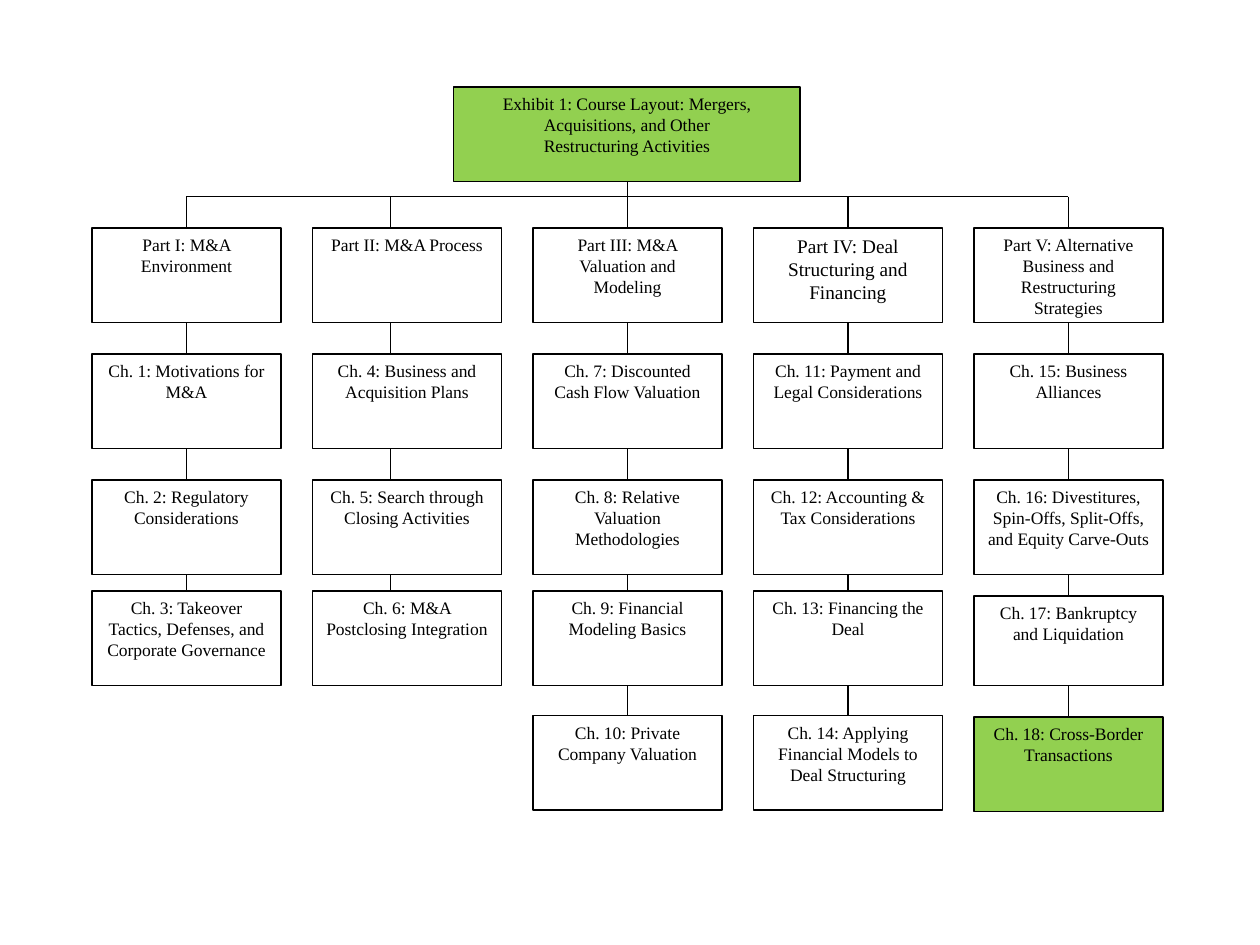
"""Build the course layout chart: five parts, each a chain of chapters."""
from dataclasses import dataclass
from itertools import pairwise

import pptx
import pptx.dml.color
import pptx.enum.shapes
import pptx.enum.text
import pptx.oxml
import pptx.util
from pptx.util import Inches

COLORS = {"ink": "000000", "plain": "FFFFFF", "highlight": "92D050"}
FONT = "Times New Roman"
BOX_WIDTH, BOX_HEIGHT = 1.5, 0.75
FIRST_LEFT, COLUMN_PITCH = 0.73, 1.75
LEVEL_TOPS = (1.81, 2.81, 3.81, 4.69, 5.68)
BUS_Y = 1.56
ROOT_LEFT, ROOT_TOP, ROOT_WIDTH = 3.6, 0.69, 2.75


@dataclass
class Topic:
    label: str
    size: int = 10
    fill: str = "plain"
    drop: float = 0
    height: float = BOX_HEIGHT


@dataclass
class Part:
    topics: list[Topic]
    stem_shift: float = 0


PARTS = [
    Part([
        Topic("Part I: M&A Environment"),
        Topic("Ch. 1: Motivations for M&A"),
        Topic("Ch. 2: Regulatory Considerations"),
        Topic("Ch. 3: Takeover Tactics, Defenses, and Corporate Governance"),
    ]),
    Part([
        Topic("Part II: M&A Process"),
        Topic("Ch. 4: Business and Acquisition Plans"),
        Topic("Ch. 5: Search through Closing Activities"),
        Topic("Ch. 6: M&A Postclosing Integration"),
    ], stem_shift=-0.13),
    Part([
        Topic("Part III: M&A Valuation and Modeling"),
        Topic("Ch. 7: Discounted Cash Flow Valuation"),
        Topic("Ch. 8: Relative Valuation Methodologies"),
        Topic("Ch. 9: Financial Modeling Basics"),
        Topic("Ch. 10: Private Company Valuation"),
    ]),
    Part([
        Topic("Part IV: Deal Structuring and Financing", size=11),
        Topic("Ch. 11: Payment and Legal Considerations"),
        Topic("Ch. 12: Accounting & Tax Considerations"),
        Topic("Ch. 13: Financing the Deal"),
        Topic("Ch. 14: Applying Financial Models to Deal Structuring"),
    ]),
    Part([
        Topic("Part V: Alternative Business and Restructuring Strategies"),
        Topic("Ch. 15: Business Alliances"),
        Topic("Ch. 16: Divestitures, Spin-Offs, Split-Offs, and Equity Carve-Outs"),
        Topic("Ch. 17: Bankruptcy and Liquidation", drop=0.04, height=0.71),
        Topic("Ch. 18: Cross-Border Transactions", fill="highlight", drop=0.01),
    ]),
]


def rgb(name: str) -> pptx.dml.color.RGBColor:
    """Look up a palette colour."""
    return pptx.dml.color.RGBColor.from_string(COLORS[name])


def format_box(box, text: str, size: int, fill: str) -> None:
    """Fill, outline and label a chart box."""
    box.fill.solid()
    box.fill.fore_color.rgb = rgb(fill)
    box.line.color.rgb = rgb("ink")
    box.line.width = pptx.util.Pt(0.75)
    frame = box.text_frame
    frame.text = text
    frame.word_wrap = True
    frame.auto_size = pptx.enum.text.MSO_AUTO_SIZE.NONE
    frame.vertical_anchor = pptx.enum.text.MSO_ANCHOR.TOP
    frame.margin_left = frame.margin_right = Inches(0.1)
    frame.margin_top = frame.margin_bottom = Inches(0.05)
    for paragraph in frame.paragraphs:
        paragraph.alignment = pptx.enum.text.PP_ALIGN.CENTER
        for run in paragraph.runs:
            run.font.name = FONT
            run.font.size = pptx.util.Pt(size)
            run.font.color.rgb = rgb("ink")


def draw_line(slide, x1: float, y1: float, x2: float, y2: float) -> None:
    """Draw a thin straight connector without a shadow."""
    line = slide.shapes.add_connector(
        pptx.enum.shapes.MSO_CONNECTOR.STRAIGHT,
        Inches(x1), Inches(y1), Inches(x2), Inches(y2))
    line.line.color.rgb = rgb("ink")
    line.line.width = pptx.util.Pt(0.75)
    properties = line._element.spPr
    properties.append(pptx.oxml.parse_xml(
        '<a:effectLst xmlns:a="http://schemas.openxmlformats.org/drawingml/2006/main"/>'))


def draw_part(slide, part: Part, left: float) -> None:
    """Draw one column of boxes and the stems that link them."""
    stem = left + BOX_WIDTH / 2 + part.stem_shift
    spans = [(BUS_Y, BUS_Y)]
    for topic, level_top in zip(part.topics, LEVEL_TOPS):
        top = level_top + topic.drop
        spans.append((top, top + topic.height))
        box = slide.shapes.add_shape(
            pptx.enum.shapes.MSO_SHAPE.RECTANGLE,
            Inches(left), Inches(top), Inches(BOX_WIDTH), Inches(topic.height))
        box.shadow.inherit = False
        format_box(box, topic.label, topic.size, topic.fill)
    for (_, upper_bottom), (lower_top, _) in pairwise(spans):
        draw_line(slide, stem, upper_bottom, stem, lower_top)


def main() -> None:
    """Assemble and save the slide."""
    deck = pptx.Presentation()
    deck.slide_width, deck.slide_height = Inches(10), Inches(7.5)
    slide = deck.slides.add_slide(deck.slide_layouts.get_by_name("Title Only"))

    root = slide.shapes.title
    root.left, root.top = Inches(ROOT_LEFT), Inches(ROOT_TOP)
    root.width, root.height = Inches(ROOT_WIDTH), Inches(BOX_HEIGHT)
    format_box(
        root,
        "Exhibit 1: Course Layout: Mergers, Acquisitions, and Other\nRestructuring Activities",
        10, "highlight")

    lefts = [FIRST_LEFT + COLUMN_PITCH * index for index in range(len(PARTS))]
    centers = [left + BOX_WIDTH / 2 for left in lefts]
    draw_line(slide, centers[0], BUS_Y, centers[-1], BUS_Y)
    draw_line(slide, centers[2], ROOT_TOP + BOX_HEIGHT, centers[2], BUS_Y)
    for part, left in zip(PARTS, lefts):
        draw_part(slide, part, left)

    deck.save("out.pptx")


if __name__ == "__main__":
    main()
